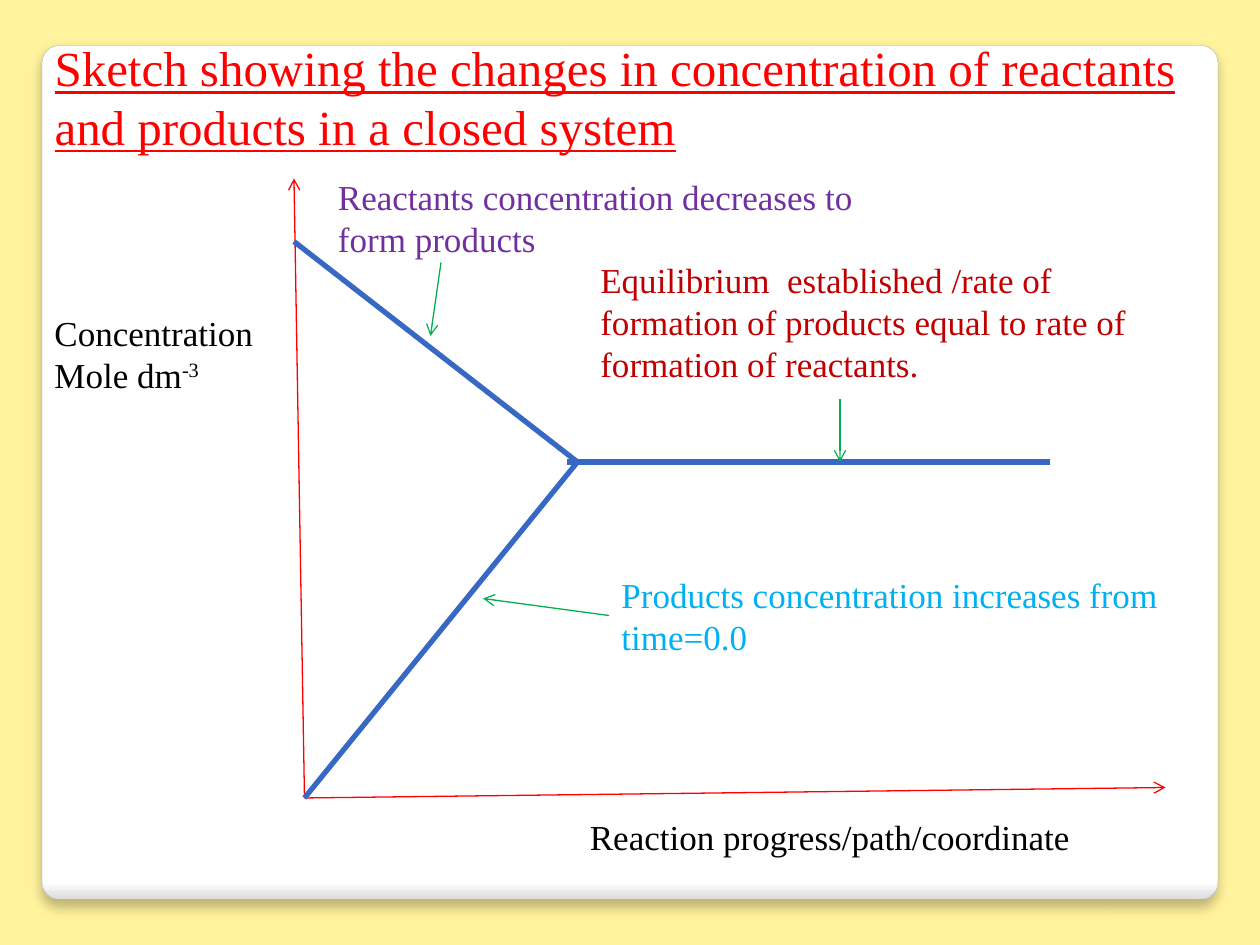
import pptx
import pptx.dml.color
import pptx.enum.shapes
import pptx.enum.text
import pptx.oxml
import pptx.oxml.ns
import pptx.util

RGBColor = pptx.dml.color.RGBColor
CREAM = RGBColor(0xFF, 0xF3, 0x9D)
WHITE = RGBColor(0xFF, 0xFF, 0xFF)
SILVER = RGBColor(0xDA, 0xDA, 0xDA)
GREY = RGBColor(0xA4, 0xA4, 0xA4)
BLACK = RGBColor(0x00, 0x00, 0x00)
RED = RGBColor(0xFF, 0x00, 0x00)
PURPLE = RGBColor(0x70, 0x30, 0xA0)
CRIMSON = RGBColor(0xC0, 0x00, 0x00)
SKY = RGBColor(0x00, 0xB0, 0xF0)
BLUE = RGBColor(0x36, 0x68, 0xC4)
GREEN = RGBColor(0x00, 0xB0, 0x50)

PANEL_SHADOW = (
    f'<a:effectLst {pptx.oxml.ns.nsdecls("a")}>'
    '<a:outerShdw blurRad="76200" dist="50800" dir="5400000" algn="tl" rotWithShape="0">'
    '<a:srgbClr val="000000"><a:alpha val="25000"/></a:srgbClr>'
    '</a:outerShdw></a:effectLst>'
)


class Sketch:
    """Draws on one slide with a grid of 120 columns and 90 rows."""

    font = "Times New Roman"
    columns, rows = 120, 90

    def __init__(self):
        self.deck = pptx.Presentation()
        self.deck.slide_width = pptx.util.Inches(10)
        self.deck.slide_height = pptx.util.Inches(7.5)
        self.slide = self.deck.slides.add_slide(self.deck.slide_layouts[5])
        background = self.slide.background.fill
        background.solid()
        background.fore_color.rgb = CREAM

    def place(self, column, row):
        return (
            round(self.deck.slide_width * column / self.columns),
            round(self.deck.slide_height * row / self.rows),
        )

    def box(self, column, row, width, height):
        return self.place(column, row) + self.place(width, height)

    def panel(self, *area):
        panel = self.slide.shapes.add_shape(
            pptx.enum.shapes.MSO_SHAPE.ROUNDED_RECTANGLE, *self.box(*area))
        panel.adjustments[0] = 0.02
        panel.fill.gradient()
        panel.fill.gradient_angle = 270
        for stop, position, colour in zip(
                panel.fill.gradient_stops, (0.98, 1), (WHITE, SILVER)):
            stop.position = position
            stop.color.rgb = colour
        panel.line.color.rgb = GREY
        panel.line.width = pptx.util.Pt(0.16)
        panel.element.spPr.append(pptx.oxml.parse_xml(PANEL_SHADOW))
        panel.element.getparent().insert(2, panel.element)

    def add_text(self, frame, paragraphs, colour, size):
        frame.word_wrap = True
        frame.auto_size = pptx.enum.text.MSO_AUTO_SIZE.NONE
        for index, runs in enumerate(paragraphs):
            paragraph = frame.add_paragraph() if index else frame.paragraphs[0]
            paragraph.alignment = pptx.enum.text.PP_ALIGN.LEFT
            for text in runs:
                run = paragraph.add_run()
                run.text = text
                run.font.name = self.font
                run.font.size = pptx.util.Pt(size)
                run.font.color.rgb = colour

    def title(self, text, *area):
        heading = self.slide.shapes.title
        heading.left, heading.top, heading.width, heading.height = self.box(*area)
        self.add_text(heading.text_frame, [[text]], RED, 28)
        heading.text_frame.vertical_anchor = pptx.enum.text.MSO_ANCHOR.TOP
        heading.text_frame.paragraphs[0].runs[0].font.underline = True

    def label(self, paragraphs, colour, *area):
        label = self.slide.shapes.add_textbox(*self.box(*area))
        self.add_text(label.text_frame, paragraphs, colour, 20)
        label.text_frame.vertical_anchor = pptx.enum.text.MSO_ANCHOR.MIDDLE
        return label

    def line(self, start, end, colour, width=0.75, arrow=True):
        line = self.slide.shapes.add_connector(
            pptx.enum.shapes.MSO_CONNECTOR.STRAIGHT,
            *self.place(*start), *self.place(*end))
        line.line.color.rgb = colour
        line.line.width = pptx.util.Pt(width)
        properties = line.element.spPr
        if arrow:
            head = pptx.oxml.ns.qn("a:tailEnd")
            properties.find(pptx.oxml.ns.qn("a:ln")).append(
                properties.makeelement(head, {"type": "arrow"}))
        properties.append(properties.makeelement(pptx.oxml.ns.qn("a:effectLst"), {}))
        return line


def main():
    sketch = Sketch()
    sketch.panel(4, 4.33, 112, 81.33)
    sketch.title("Sketch showing the changes in concentration of reactants "
                 "and products in a closed system", 4, 3, 112, 12.5)

    reactants = sketch.label([["Reactants concentration decreases to form products"]],
                             PURPLE, 31, 16, 58, 9.33)
    reactants.fill.solid()
    reactants.fill.fore_color.rgb = WHITE
    sketch.label([["Equilibrium  established /rate of formation of products "
                   "equal to rate of formation of reactants."]],
                 CRIMSON, 56, 24, 54, 13.2)
    products = sketch.label([["Products concentration increases from time=0.0"]],
                            SKY, 58, 54, 54, 9.25)
    sketch.label([["Reaction progress/path/coordinate"]], BLACK, 55, 77, 55, 5.25)
    concentration = sketch.label([["Concentration"], ["Mole dm", "-3"]],
                                 BLACK, 4, 29, 22, 9.25)
    exponent = concentration.text_frame.paragraphs[1].runs[1]
    exponent.font._element.set("baseline", "30000")

    origin, equilibrium = (29, 76), (55, 44)
    for axis_end in ((28, 17), (111, 75)):
        sketch.line(origin, axis_end, RED)
    for start, end in (((54, 44), (100, 44)), ((28, 23), equilibrium),
                       (origin, equilibrium)):
        sketch.line(start, end, BLUE, width=3, arrow=False)
    products_pointer = sketch.line((58, 58.63), (46, 57), GREEN)
    products_pointer.begin_connect(products, 1)
    for start, end in (((42, 25), (41, 32)), ((80, 38), (80, 44))):
        sketch.line(start, end, GREEN)

    sketch.deck.save("out.pptx")


if __name__ == "__main__":
    main()
